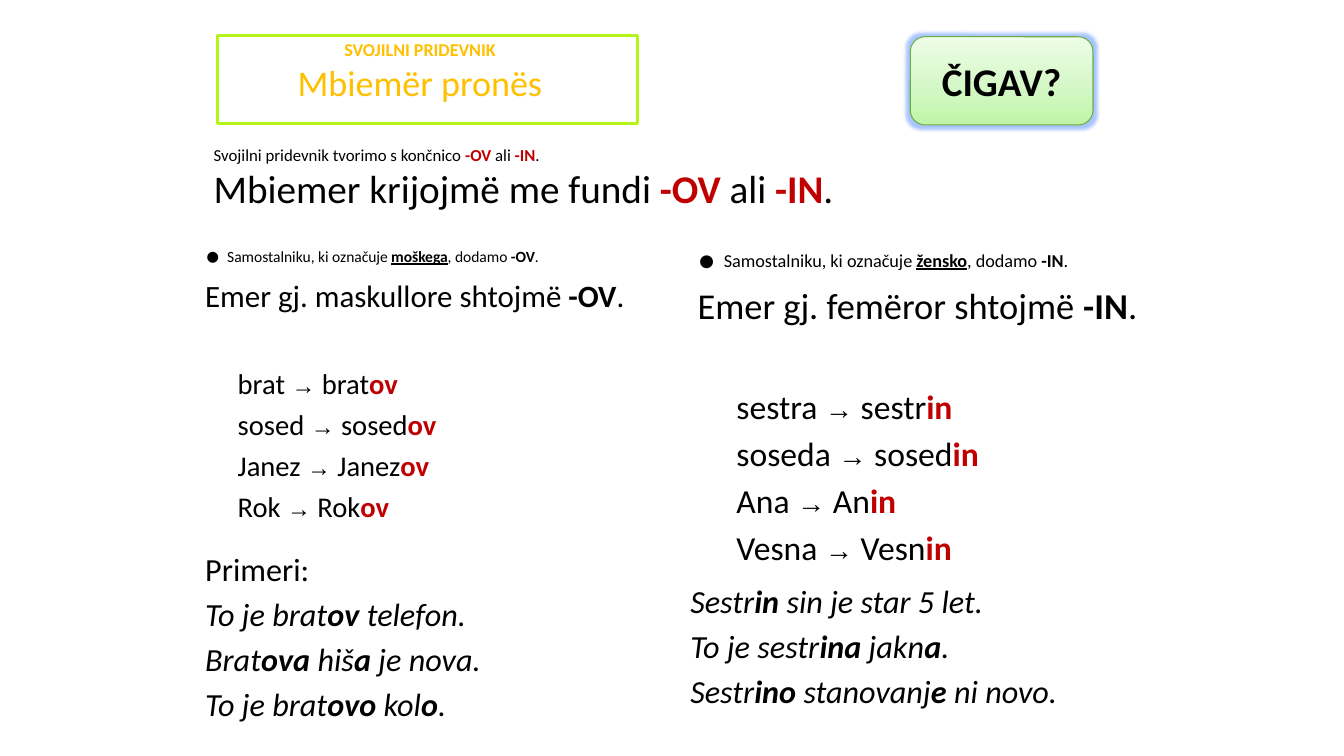
from dataclasses import dataclass

import pptx
import pptx.dml.color
import pptx.enum.shapes
import pptx.enum.text
import pptx.oxml.ns
import pptx.util
from lxml import etree

PX = 9525
qn = pptx.oxml.ns.qn
MSO = pptx.enum.shapes.MSO_SHAPE
ANCHOR = pptx.enum.text.MSO_ANCHOR
CENTER = pptx.enum.text.PP_ALIGN.CENTER


@dataclass(frozen=True)
class Theme:
    font: str = "Calibri"
    arrow_font: str = "Arial"
    ink: str = "000000"
    paper: str = "FFFFFF"
    red: str = "C00000"
    gold: str = "FFC000"
    lime: str = "B5F418"
    green: str = "6DAC43"
    glow: str = "3F7FFF"
    fade: tuple = ((0, "BEF5A7"), (35, "D1F7C2"), (100, "EDFDE7"))
    title_small: float = 12.9
    title_large: float = 25.8
    rule_small: float = 12
    large: float = 28
    example: float = 23


THEME = Theme()


@dataclass(frozen=True)
class Box:
    x: int
    y: int
    w: int
    h: int

    def emu(self) -> list[int]:
        return [v * PX for v in (self.x, self.y, self.w, self.h)]


@dataclass(frozen=True)
class Run:
    text: str
    bold: bool = False
    underline: bool = False
    italic: bool = False
    color: str = THEME.ink
    font: str = THEME.font
    scale: float = 1


@dataclass(frozen=True)
class Para:
    runs: list[Run]
    size: float
    before: float = 0
    margin: int = 0
    bullet: bool = False
    line: float = 0
    centered: bool = False


@dataclass(frozen=True)
class Column:
    box: Box
    size: float
    word_size: float
    gender: str
    lead: str
    suffix: str
    words: list[tuple[str, str]]
    gap: float
    hang: int
    indent: int


@dataclass(frozen=True)
class Examples:
    box: Box
    lines: list[list[str]]


def rgb(code: str) -> pptx.dml.color.RGBColor:
    return pptx.dml.color.RGBColor.from_string(code)


def write(tf, paras: list[Para]) -> None:
    tf.word_wrap = True
    for i, para in enumerate(paras):
        p = tf.add_paragraph() if i else tf.paragraphs[0]
        pPr = p._p.get_or_add_pPr()
        pPr.set("marL", str(para.margin * PX))
        pPr.set("indent", str(-para.margin * PX if para.bullet else 0))
        if para.bullet:
            etree.SubElement(pPr, qn("a:buSzPct")).set("val", "200000")
            etree.SubElement(pPr, qn("a:buFont")).set("typeface", THEME.font)
            etree.SubElement(pPr, qn("a:buChar")).set("char", "•")
        if para.line:
            p.line_spacing = pptx.util.Pt(para.line)
        if para.before:
            p.space_before = pptx.util.Pt(para.before)
        if para.centered:
            p.alignment = CENTER
        for run in para.runs:
            r = p.add_run()
            r.text = run.text
            r.font.name = run.font
            r.font.size = pptx.util.Pt(para.size * run.scale)
            r.font.bold, r.font.italic = run.bold, run.italic
            r.font.underline = run.underline
            r.font.color.rgb = rgb(run.color)


def add_text(slide, box: Box, paras: list[Para]) -> None:
    write(slide.shapes.add_textbox(*box.emu()).text_frame, paras)


def add_panel(slide, kind, box: Box, line: str, width: float, paras: list[Para]):
    sp = slide.shapes.add_shape(kind, *box.emu())
    sp.shadow.inherit = False
    sp.fill.solid()
    sp.fill.fore_color.rgb = rgb(THEME.paper)
    sp.line.color.rgb = rgb(line)
    sp.line.width = pptx.util.Pt(width)
    write(sp.text_frame, paras)
    return sp


def add_color(parent, code: str):
    clr = etree.SubElement(parent, qn("a:srgbClr"))
    clr.set("val", code)
    return clr


def add_glow_and_fade(sp) -> None:
    sp.fill.gradient()
    sp.fill.gradient_angle = 90
    spPr = sp._element.spPr
    stops = spPr.find(".//" + qn("a:gsLst"))
    for gs in list(stops):
        stops.remove(gs)
    for percent, code in THEME.fade:
        gs = etree.SubElement(stops, qn("a:gs"))
        gs.set("pos", str(percent * 1000))
        add_color(gs, code)
    glow = etree.SubElement(spPr.find(qn("a:effectLst")), qn("a:glow"))
    glow.set("rad", "63500")
    alpha = etree.SubElement(add_color(glow, THEME.glow), qn("a:alpha"))
    alpha.set("val", "45000")


def rule(lead: str, size: float) -> Para:
    return Para([Run(lead), Run("-OV ", True, color=THEME.red), Run("ali "),
                 Run("-IN", True, color=THEME.red), Run(".")], size)


def add_column(slide, col: Column) -> None:
    ending = [Run("-" + col.suffix.upper(), True), Run(".")]
    paras = [
        Para([Run("Samostalniku, ki označuje "), Run(col.gender, True, True), Run(", dodamo "), *ending],
             col.size / 2, margin=col.hang, bullet=True, line=round(col.size * 1.086, 1)),
        Para([Run(col.lead), *ending], col.size, before=round(5.2 + col.size * 0.135, 1)),
    ]
    for i, (noun, stem) in enumerate(col.words):
        runs = [Run(noun + " "), Run("→", font=THEME.arrow_font, scale=5 / 6),
                Run(" " + stem), Run(col.suffix, True, color=THEME.red)]
        paras.append(Para(runs, col.word_size, before=4.8 if i else col.gap, margin=col.indent))
    add_text(slide, col.box, paras)


def add_examples(slide, ex: Examples) -> None:
    paras = []
    for i, parts in enumerate(ex.lines):
        runs = [Run(t, bold=k % 2 == 1, italic=len(parts) > 1) for k, t in enumerate(parts)]
        paras.append(Para(runs, THEME.example, before=4.6 if i else 0))
    add_text(slide, ex.box, paras)


COLUMNS = [
    Column(Box(186, 216, 453, 287), 22.1, 20.4, "moškega", "Emer gj. maskullore shtojmë ", "ov",
           [("brat", "brat"), ("sosed", "sosed"), ("Janez", "Janez"), ("Rok", "Rok")], 37, 21, 31),
    Column(Box(655, 216, 446, 287), 26, 24, "žensko", "Emer gj. femëror shtojmë ", "in",
           [("sestra", "sestr"), ("soseda", "sosed"), ("Ana", "An"), ("Vesna", "Vesn")], 42, 25, 37),
]
EXAMPLES = [
    Examples(Box(186, 518, 416, 181), [
        ["Primeri:"],
        ["To je brat", "ov", " telefon."],
        ["Brat", "ova", " hiš", "a", " je nova."],
        ["To je brat", "ovo ", "kol", "o", "."]]),
    Examples(Box(648, 549, 393, 147), [
        ["Sestr", "in", " sin je star 5 let."],
        ["To je sestr", "ina", " jakn", "a", "."],
        ["Sestr", "ino", " stanovanj", "e ", "ni novo."]]),
]


def main() -> None:
    prs = pptx.Presentation()
    prs.slide_width, prs.slide_height = 1280 * PX, 720 * PX
    slide = prs.slides.add_slide(prs.slide_layouts[6])
    title = add_panel(slide, MSO.RECTANGLE, Box(207, 34, 400, 84), THEME.lime, 2, [
        Para([Run("SVOJILNI PRIDEVNIK", True, color=THEME.gold)], THEME.title_small, centered=True),
        Para([Run("Mbiemër pronës", color=THEME.gold)], THEME.title_large, centered=True)])
    tf = title.text_frame
    tf.vertical_anchor = ANCHOR.TOP
    tf.margin_left, tf.margin_top, tf.margin_right = 0, 3 * PX, 14 * PX
    question = add_panel(slide, MSO.ROUNDED_RECTANGLE, Box(867, 35, 174, 84), THEME.green, 0.75,
                         [Para([Run("ČIGAV?", True)], THEME.large, centered=True)])
    question.text_frame.vertical_anchor = ANCHOR.MIDDLE
    add_glow_and_fade(question)
    for col in COLUMNS:
        add_column(slide, col)
    add_text(slide, Box(194, 133, 749, 118), [
        rule("Svojilni pridevnik tvorimo s končnico ", THEME.rule_small),
        rule("Mbiemer krijojmë me fundi ", THEME.large)])
    for ex in EXAMPLES:
        add_examples(slide, ex)
    prs.save("out.pptx")


if __name__ == "__main__":
    main()
